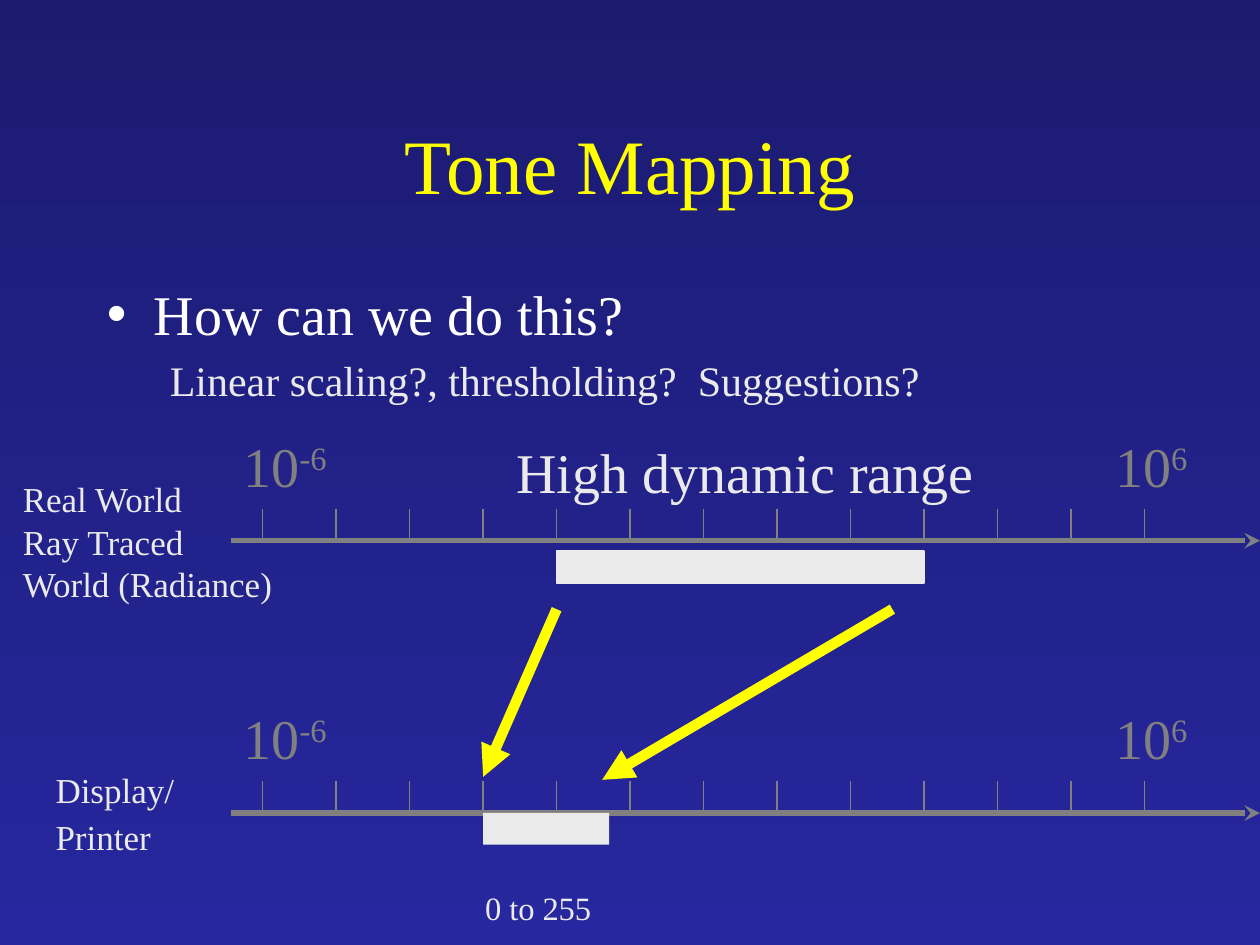
import pptx
import pptx.util
import pptx.dml.color
import pptx.enum.shapes
import pptx.enum.text
import pptx.oxml
import pptx.oxml.ns
import lxml.etree

Cm = pptx.util.Cm
Pt = pptx.util.Pt
RGBColor = pptx.dml.color.RGBColor
qn = pptx.oxml.ns.qn
SubElement = lxml.etree.SubElement

FONT = "Times New Roman"
YELLOW = RGBColor(0xFF, 0xFF, 0x00)
WHITE = RGBColor(0xFF, 0xFF, 0xFF)
LIGHT = RGBColor(0xEA, 0xEA, 0xEA)
GRAY = RGBColor(0x80, 0x80, 0x80)
TOP_BLUE = RGBColor(0x1B, 0x1B, 0x71)
BOTTOM_BLUE = RGBColor(0x27, 0x27, 0x9F)
TEXT_SHADOW = (
    '<a:effectLst xmlns:a="http://schemas.openxmlformats.org/drawingml/2006/main">'
    '<a:outerShdw dist="35921" dir="2700000" algn="ctr">'
    '<a:srgbClr val="000000"/></a:outerShdw></a:effectLst>'
)

presentation = pptx.Presentation()
presentation.slide_width = Cm(25.4)
presentation.slide_height = Cm(19.05)
slide = presentation.slides.add_slide(presentation.slide_layouts[1])


def add_line(start, end, color, width, arrowhead=None):
    """Draw a straight line between two (x, y) points in centimetres."""
    line = slide.shapes.add_connector(
        pptx.enum.shapes.MSO_CONNECTOR.STRAIGHT,
        Cm(start[0]), Cm(start[1]), Cm(end[0]), Cm(end[1]))
    line.line.color.rgb = color
    line.line.width = Pt(width)
    if arrowhead:
        SubElement(line.line._get_or_add_ln(), qn("a:tailEnd"), type=arrowhead)
    SubElement(line._element.spPr, qn("a:effectLst"))


def add_label(left, top, width, height, lines, size, color, spacing=1.0):
    """Add a text box; each line is a list of (text, baseline) runs."""
    box = slide.shapes.add_textbox(Cm(left), Cm(top), Cm(width), Cm(height))
    frame = box.text_frame
    frame.word_wrap = False
    frame.auto_size = pptx.enum.text.MSO_AUTO_SIZE.SHAPE_TO_FIT_TEXT
    for index, runs in enumerate(lines):
        paragraph = frame.add_paragraph() if index else frame.paragraphs[0]
        paragraph.line_spacing = spacing
        space = SubElement(paragraph._p.get_or_add_pPr(), qn("a:spcBef"))
        SubElement(space, qn("a:spcPct"), val="50000")
        for text, baseline in runs:
            run = paragraph.add_run()
            run.text = text
            run.font.name = FONT
            run.font.size = Pt(size)
            run.font.color.rgb = color
            if baseline:
                run.font._element.set("baseline", str(baseline * 1000))


# Background
background = slide.background.fill
background.gradient()
background.gradient_angle = 270
for stop, color in zip(background.gradient_stops, (TOP_BLUE, BOTTOM_BLUE)):
    stop.color.rgb = color

# Title and question
title = slide.shapes.title
title.left, title.top, title.width, title.height = Cm(1.9), Cm(1.7), Cm(21.6), Cm(3.18)
title.text_frame.text = "Tone Mapping"

body = slide.placeholders[1]
body.left, body.top, body.width, body.height = Cm(1.9), Cm(5.5), Cm(21.16), Cm(3.18)
body.text_frame.text = "How can we do this?\nLinear scaling?, thresholding?  Suggestions?"
question, suggestions = body.text_frame.paragraphs
suggestions.level = 1
for paragraph, margin, indent in ((question, 0.95, -0.95), (suggestions, 2.06, -0.79)):
    properties = paragraph._p.get_or_add_pPr()
    properties.set("marL", str(Cm(margin)))
    properties.set("indent", str(Cm(indent)))
bullet_color = SubElement(question._p.pPr, qn("a:buClr"))
SubElement(bullet_color, qn("a:srgbClr"), val=str(WHITE))
SubElement(question._p.pPr, qn("a:buChar"), char="•")
SubElement(suggestions._p.pPr, qn("a:buNone"))

for paragraph, size, color in (
        (title.text_frame.paragraphs[0], 44, YELLOW),
        (question, 32, WHITE),
        (suggestions, 24, LIGHT)):
    font = paragraph.runs[0].font
    font.name = FONT
    font.size = Pt(size)
    font.color.rgb = color
    fill = font._element.find(qn("a:solidFill"))
    fill.addnext(pptx.oxml.parse_xml(TEXT_SHADOW))
for placeholder in (title, body):
    placeholder.text_frame.auto_size = pptx.enum.text.MSO_AUTO_SIZE.NONE

# Two logarithmic axes with 13 ticks each
FIRST_TICK, LAST_TICK, TICK_COUNT = 5.29, 23.07, 13
tick_gap = (LAST_TICK - FIRST_TICK) / (TICK_COUNT - 1)
for axis_y in (10.9, 16.39):
    for index in range(TICK_COUNT):
        x = FIRST_TICK + index * tick_gap
        add_line((x, axis_y - 0.64), (x, axis_y), GRAY, 1)
    add_line((4.66, axis_y), (25.4, axis_y), GRAY, 3, "stealth")
    for left, width, exponent in ((4.66, 2.26, "-6"), (22.23, 2.01, "6")):
        add_label(left, axis_y - 2.33, width, 1.6,
                  [[("10", 0), (exponent, 30)]], 32, GRAY)

# Labels
add_label(0.21, 9.8, 5.59, 2.62,
          [[("Real World", 0)], [("Ray Traced", 0)], [("World (Radiance)", 0)]],
          20, LIGHT, 0.6)
add_label(0.87, 15.6, 2.9, 1.85, [[("Display/", 0)], [("Printer", 0)]], 20, LIGHT, 0.7)
add_label(9.53, 17.65, 2.95, 1.14, [[("0 to 255", 30)]], 32, LIGHT)
add_label(10.16, 8.69, 9.73, 1.6, [[("High dynamic range", 0)]], 32, LIGHT)

# Mapping arrows from the wide range to the narrow one
add_line((17.99, 12.28), (12.14, 15.72), YELLOW, 6, "triangle")
add_line((11.22, 12.28), (9.74, 15.66), YELLOW, 6, "triangle")

# Range bars
for left, top, width, outlined in ((11.22, 11.11, 7.41, True), (9.74, 16.39, 2.54, False)):
    bar = slide.shapes.add_shape(pptx.enum.shapes.MSO_SHAPE.RECTANGLE,
                                 Cm(left), Cm(top), Cm(width), Cm(0.64))
    bar.shadow.inherit = False
    bar.fill.solid()
    bar.fill.fore_color.rgb = LIGHT
    if outlined:
        bar.line.color.rgb = LIGHT
        bar.line.width = Pt(1)
    else:
        bar.line.fill.background()

presentation.save("out.pptx")
